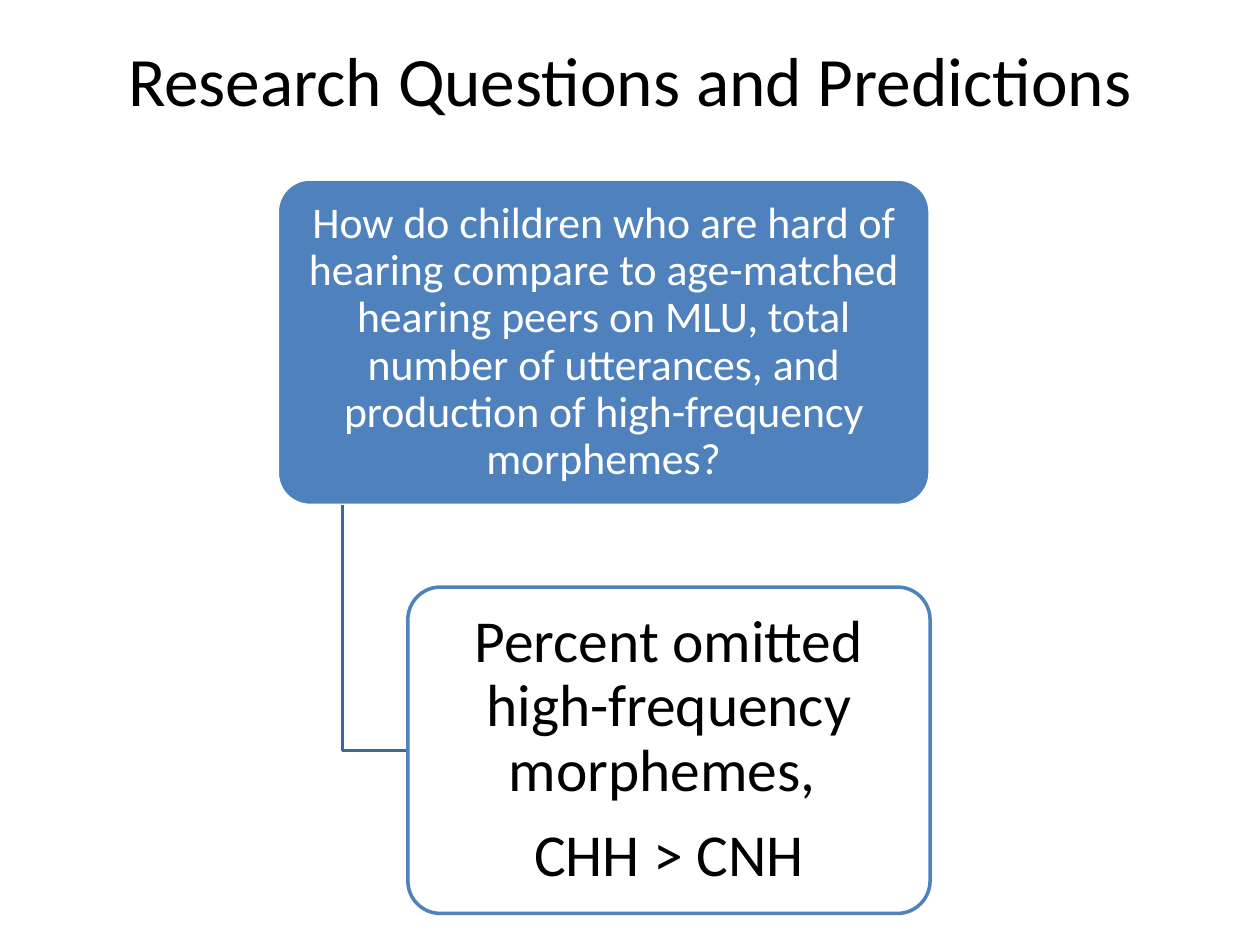
from lxml import etree
from pptx import Presentation
from pptx.dml.color import RGBColor
from pptx.enum.shapes import MSO_SHAPE
from pptx.enum.text import MSO_ANCHOR, PP_ALIGN
from pptx.oxml.ns import qn
from pptx.util import Cm, Pt

ROUNDED = MSO_SHAPE.ROUNDED_RECTANGLE
MIDDLE = MSO_ANCHOR.MIDDLE
CENTER = PP_ALIGN.CENTER

THEME = {
    "font": "Calibri",
    "black": RGBColor.from_string("000000"),
    "white": RGBColor.from_string("FFFFFF"),
    "blue": RGBColor.from_string("4F81BD"),
    "link": RGBColor.from_string("3F6797"),
    "title": 39.6,
    "question": 25,
    "prediction": 34,
    "line": 2,
}


def write(shape, *lines, size, color, spacing=None, after=None, inset=(0.25, 0.13)):
    """Fill a shape with centred paragraphs; inset is (sides, top and bottom) in cm."""
    tf = shape.text_frame
    tf.word_wrap = True
    tf.vertical_anchor = MIDDLE
    tf.margin_left = tf.margin_right = Cm(inset[0])
    tf.margin_top = tf.margin_bottom = Cm(inset[1])
    for i, line in enumerate(lines):
        p = tf.add_paragraph() if i else tf.paragraphs[0]
        p.alignment = CENTER
        p.line_spacing = spacing
        p.space_after = after
        r = p.add_run()
        r.text = line
        r.font.name = THEME["font"]
        r.font.size = Pt(size)
        r.font.color.rgb = color


def add_box(left, top, width, height, fill, line):
    sp = s.shapes.add_shape(ROUNDED, Cm(left), Cm(top), Cm(width), Cm(height))
    sp.adjustments[0] = 0.1
    sp.shadow.inherit = False
    sp.fill.solid()
    sp.fill.fore_color.rgb = fill
    sp.line.color.rgb = line
    sp.line.width = Pt(THEME["line"])
    return sp


prs = Presentation()
prs.slide_width, prs.slide_height = Cm(25.4), Cm(19.05)
s = prs.slides.add_slide(prs.slide_layouts[5])

title = s.shapes.title
title.left, title.top, title.width, title.height = Cm(1.27), Cm(0), Cm(22.86), Cm(3.18)
write(title, "Research Questions and Predictions", size=THEME["title"], color=THEME["black"])

# The prediction hangs below the question, indented by a fifth of its width
left, top, width, height = 5.59, 3.61, 13.16, 6.58
step = width / 10
child_left = left + 2 * step
child_top = top + 1.25 * height

question = add_box(left, top, width, height, THEME["blue"], THEME["white"])
write(question,
      "How do children who are hard of hearing compare to age-matched hearing peers "
      "on MLU, total number of utterances, and production of high-frequency morphemes?",
      size=THEME["question"], color=THEME["white"], spacing=0.9, after=Pt(9),
      inset=(0.13, 0.08))

middle = child_top + height / 2
fb = s.shapes.build_freeform(Cm(left + step), Cm(top + height))
fb.add_line_segments([(Cm(left + step), Cm(middle)), (Cm(child_left), Cm(middle))], close=False)
elbow = fb.convert_to_shape()
elbow.shadow.inherit = False
elbow.fill.background()
elbow.line.color.rgb = THEME["link"]
elbow.line.width = Pt(THEME["line"])

prediction = add_box(child_left, child_top, width - 2 * step, height,
                     THEME["white"], THEME["blue"])
fill_color = prediction.fill._xPr.find(qn("a:solidFill"))[0]
etree.SubElement(fill_color, qn("a:alpha"), val="90000")
write(prediction, "Percent omitted high-frequency morphemes, ", "CHH > CNH",
      size=THEME["prediction"], color=THEME["black"], spacing=0.9, after=Pt(12),
      inset=(0.17, 0.12))

prs.save("out.pptx")
